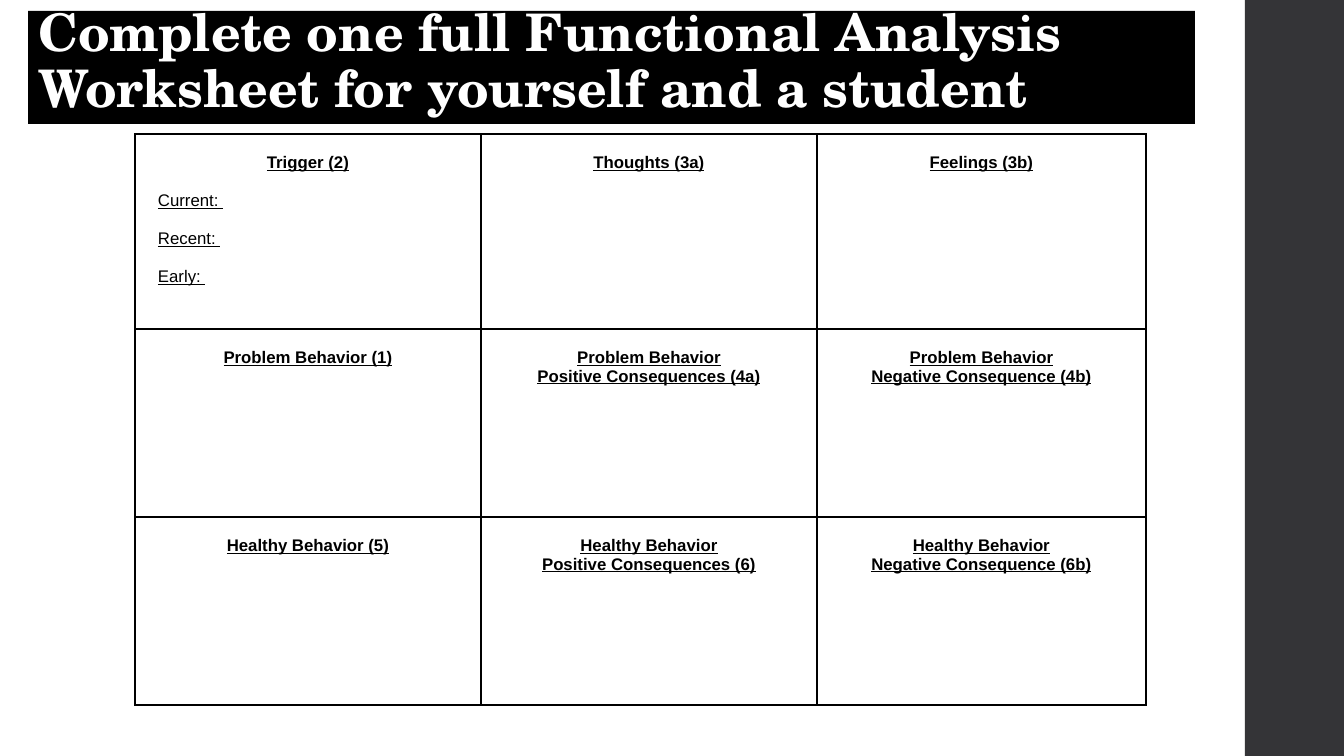
from dataclasses import dataclass

from lxml.etree import SubElement
from pptx import Presentation
from pptx.dml.color import RGBColor
from pptx.enum.shapes import MSO_SHAPE
from pptx.enum.text import MSO_ANCHOR, MSO_AUTO_SIZE, PP_ALIGN
from pptx.oxml.ns import qn
from pptx.slide import Slide
from pptx.table import _Cell
from pptx.text.text import TextFrame
from pptx.util import Emu, Pt

EMU_PER_PX = 914400 / 100.8
BLACK, WHITE, CHARCOAL = "000000", "FFFFFF", "343437"
COLUMN_WIDTHS = (346, 336, 329)
ROW_HEIGHTS = (195, 188, 188)
LINE_GAP = Pt(13.8)


@dataclass(frozen=True)
class WorksheetCell:
    heading: tuple[str, ...]
    prompts: tuple[str, ...] = ()


WORKSHEET = (
    (
        WorksheetCell(("Trigger (2)",), ("Current: ", "Recent: ", "Early: ")),
        WorksheetCell(("Thoughts (3a)",)),
        WorksheetCell(("Feelings (3b)",)),
    ),
    (
        WorksheetCell(("Problem Behavior (1)",)),
        WorksheetCell(("Problem Behavior", "Positive Consequences (4a)")),
        WorksheetCell(("Problem Behavior", "Negative Consequence (4b)")),
    ),
    (
        WorksheetCell(("Healthy Behavior (5)",)),
        WorksheetCell(("Healthy Behavior", "Positive Consequences (6)")),
        WorksheetCell(("Healthy Behavior", "Negative Consequence (6b)")),
    ),
)


def px(length: int) -> Emu:
    return Emu(round(length * EMU_PER_PX))


def color(value: str) -> RGBColor:
    return RGBColor.from_string(value)


def add_title(page: Slide) -> None:
    title = page.shapes.title
    title.left, title.top, title.width, title.height = px(28), px(11), px(1167), px(113)
    title.fill.solid()
    title.fill.fore_color.rgb = color(BLACK)
    frame = title.text_frame
    frame.auto_size = MSO_AUTO_SIZE.NONE
    frame.word_wrap = True
    frame.vertical_anchor = MSO_ANCHOR.BOTTOM
    para = frame.paragraphs[0]
    para.alignment = PP_ALIGN.LEFT
    para.line_spacing = 0.9
    span = para.add_run()
    span.text = "Complete one full Functional Analysis Worksheet for yourself and a student"
    span.font.name = "TeX Gyre Schola"
    span.font.size = Pt(37)
    span.font.bold = True
    span.font.color.rgb = color(WHITE)


def add_sidebar(page: Slide) -> None:
    sidebar = page.shapes.add_shape(MSO_SHAPE.RECTANGLE, px(1245), 0, px(99), px(756))
    sidebar.shadow.inherit = False
    sidebar.fill.solid()
    sidebar.fill.fore_color.rgb = color(CHARCOAL)
    sidebar.line.fill.background()


def set_borders(cell: _Cell) -> None:
    properties = cell._tc.get_or_add_tcPr()
    for index, side in enumerate(("a:lnL", "a:lnR", "a:lnT", "a:lnB")):
        border = SubElement(properties, qn(side), w=str(Pt(1)))
        fill = SubElement(border, qn("a:solidFill"))
        SubElement(fill, qn("a:srgbClr"), val=BLACK)
        properties.insert(index, border)


def add_line(frame: TextFrame, text: str, is_heading: bool) -> None:
    para = frame.paragraphs[0]
    if para.runs:
        para = frame.add_paragraph()
    if is_heading:
        para.alignment = PP_ALIGN.CENTER
    else:
        para.alignment = PP_ALIGN.LEFT
        para.space_before = LINE_GAP
        para._p.get_or_add_pPr().set("marL", str(px(18)))
    span = para.add_run()
    span.text = text
    span.font.name = "Arial"
    span.font.size = Pt(12)
    span.font.bold = is_heading
    span.font.underline = True
    span.font.color.rgb = color(BLACK)


def fill_cell(cell: _Cell, content: WorksheetCell) -> None:
    cell.margin_left = cell.margin_right = px(5)
    cell.margin_top, cell.margin_bottom = px(19), 0
    cell.fill.background()
    set_borders(cell)
    for text in content.heading:
        add_line(cell.text_frame, text, True)
    for text in content.prompts:
        add_line(cell.text_frame, text, False)


def add_worksheet(page: Slide) -> None:
    table = page.shapes.add_table(
        len(ROW_HEIGHTS), len(COLUMN_WIDTHS), px(135), px(134),
        px(sum(COLUMN_WIDTHS)), px(sum(ROW_HEIGHTS)),
    ).table
    table.first_row = table.horz_banding = False
    for column, width in zip(table.columns, COLUMN_WIDTHS):
        column.width = px(width)
    for row, height, contents in zip(table.rows, ROW_HEIGHTS, WORKSHEET):
        row.height = px(height)
        for cell, content in zip(row.cells, contents):
            fill_cell(cell, content)


def main() -> None:
    deck = Presentation()
    deck.slide_width, deck.slide_height = px(1344), px(756)
    page = deck.slides.add_slide(deck.slide_layouts.get_by_name("Title Only"))
    add_sidebar(page)
    add_title(page)
    add_worksheet(page)
    deck.save("out.pptx")


if __name__ == "__main__":
    main()
